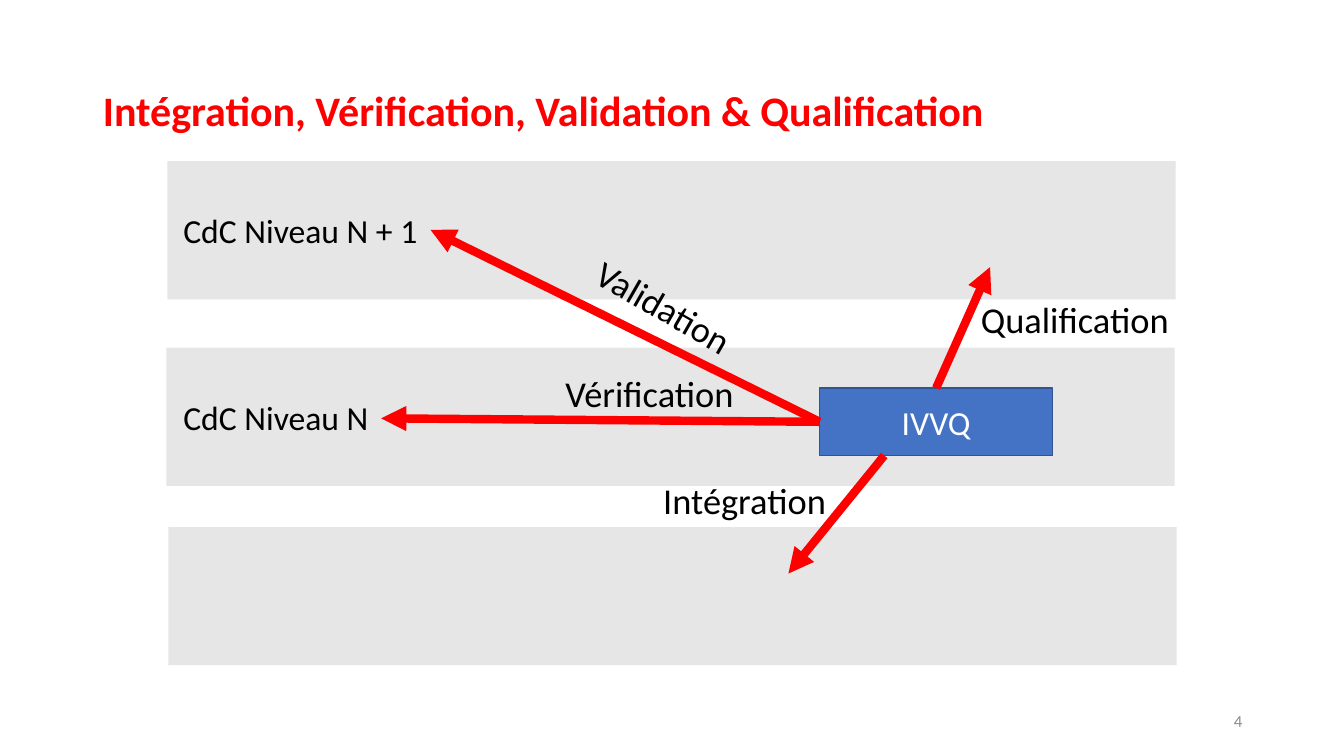
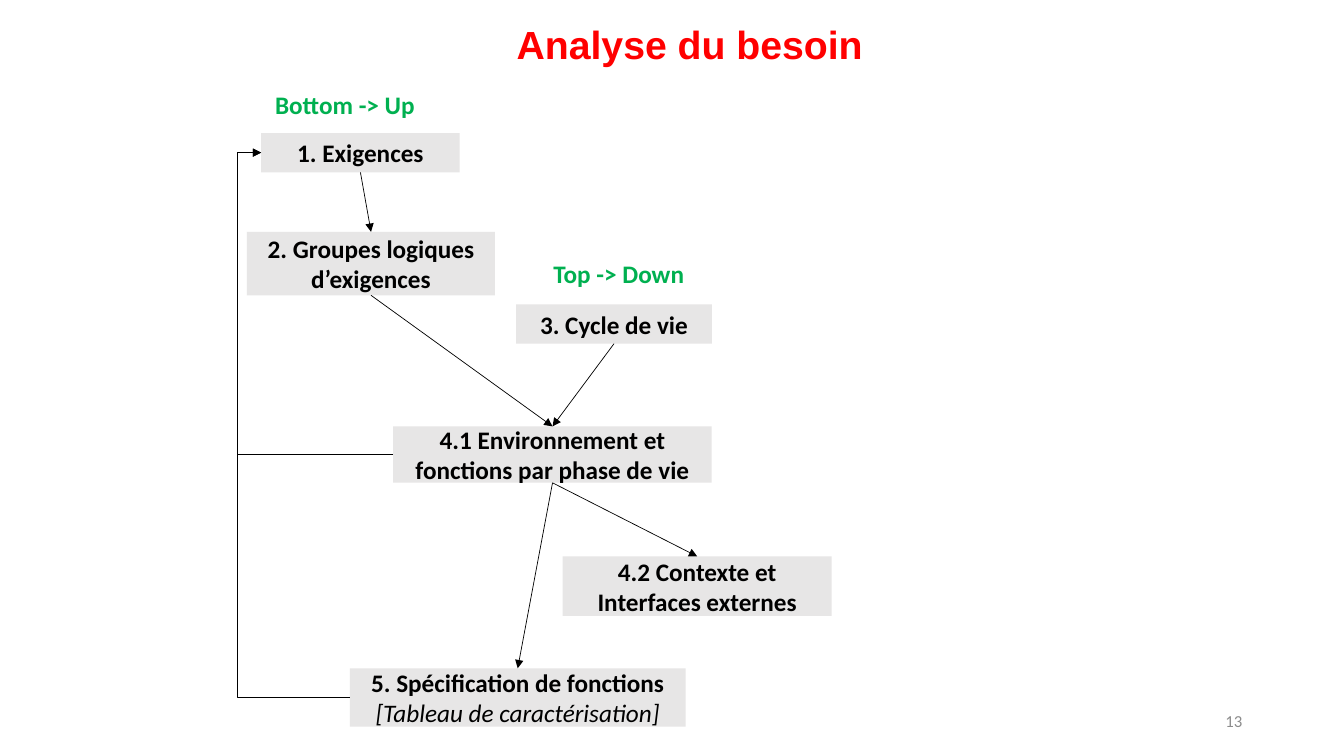
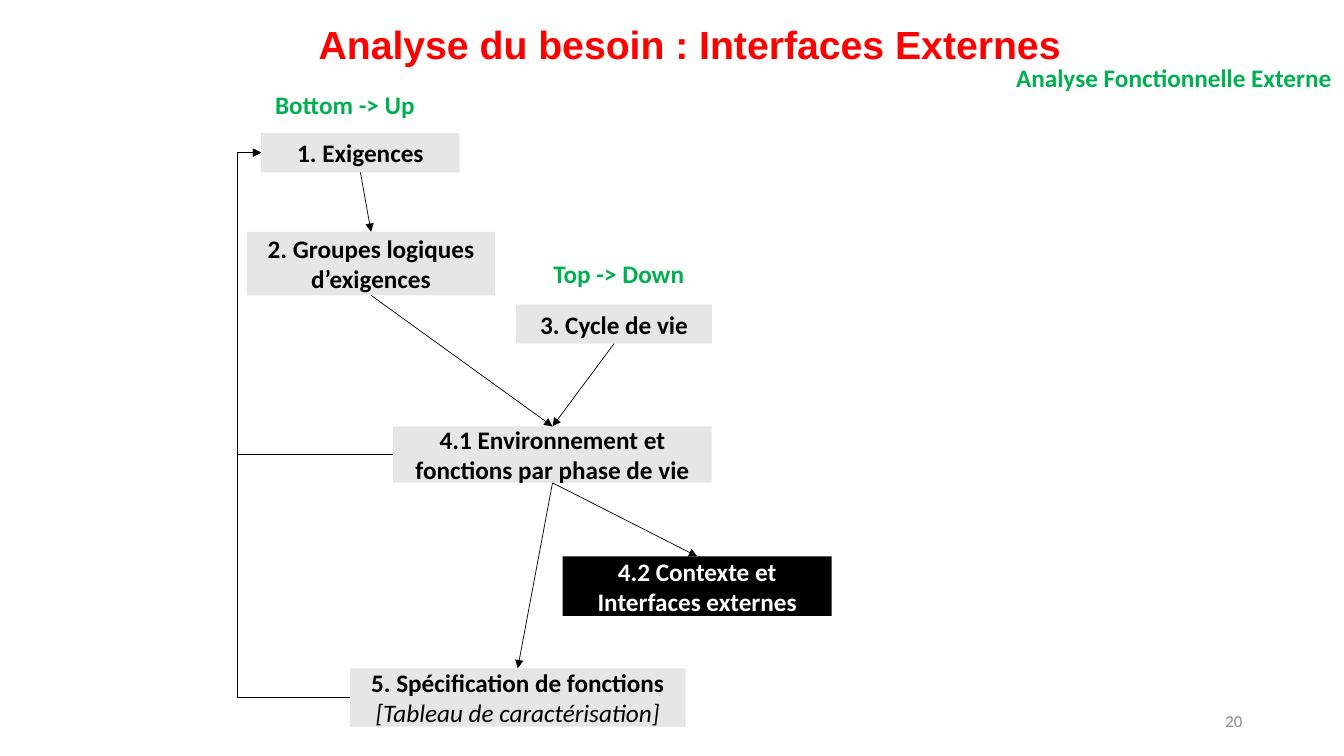
"""Builds three slides on IVVQ and on the analysis of needs."""
from dataclasses import dataclass

from lxml.etree import SubElement
from pptx import Presentation
from pptx.dml.color import RGBColor
from pptx.enum.shapes import MSO_CONNECTOR as Route, MSO_SHAPE as Preset
from pptx.enum.text import MSO_ANCHOR as Anchor, MSO_AUTO_SIZE as Fit, PP_ALIGN as Align
from pptx.oxml.ns import qn
from pptx.util import Inches, Pt


@dataclass(frozen=True)
class Theme:
    red: str = "FF0000"
    green: str = "00B050"
    blue: str = "4472C4"
    navy: str = "325491"
    band: str = "E7E6E6"
    black: str = "000000"
    white: str = "FFFFFF"
    grey: str = "8C8C8C"
    body_font: str = "Calibri"
    title_font: str = "Arial"
    heading: int = 30
    title: int = 28
    action: int = 26
    level: int = 24
    step: int = 18
    page: int = 12
    thick: float = 6
    thin: float = 0.5


theme = Theme()
TOP, LEFT, BOTTOM, RIGHT = range(4)


def write(shape, text, *, size=theme.step, color=theme.black, font=theme.body_font,
          bold=False, italic=False, align=Align.LEFT, anchor=Anchor.TOP,
          wrap=True, fit=Fit.NONE, spacing=None, append=False):
    frame = shape.text_frame
    frame.word_wrap = wrap
    frame.auto_size = fit
    frame.vertical_anchor = anchor
    paragraph = frame.add_paragraph() if append else frame.paragraphs[0]
    paragraph.alignment = align
    paragraph.line_spacing = spacing
    run = paragraph.add_run()
    run.text = text
    run.font.name = font
    run.font.size = Pt(size)
    run.font.bold = bold
    run.font.italic = italic
    run.font.color.rgb = RGBColor.from_string(color)


def draw_arrow(slide, start, end, color, weight, rail=None):
    route = Route.STRAIGHT if rail is None else Route.ELBOW
    arrow = slide.shapes.add_connector(route, 0, 0, 0, 0)
    for target, glue, axes in ((start, arrow.begin_connect, ("begin_x", "begin_y")),
                               (end, arrow.end_connect, ("end_x", "end_y"))):
        if isinstance(target[0], float):
            for axis, length in zip(axes, target):
                setattr(arrow, axis, Inches(length))
        else:
            glue(*target)
    arrow.line.color.rgb = RGBColor.from_string(color)
    arrow.line.width = Pt(weight)
    SubElement(arrow.line._get_or_add_ln(), qn("a:tailEnd"), type="triangle")
    properties = arrow._element.spPr
    SubElement(properties, qn("a:effectLst"))
    if rail is not None:
        bend = (arrow.begin_x - Inches(rail)) / (arrow.begin_x - arrow.end_x)
        guides = properties.find(qn("a:prstGeom")).get_or_add_avLst()
        SubElement(guides, qn("a:gd"), name="adj1", fmla=f"val {round(bend * 100000)}")


deck = Presentation()
deck.slide_width, deck.slide_height = Inches(13.33), Inches(7.5)
title_only = deck.slide_layouts[5]

heading_look = dict(size=theme.heading, font=theme.body_font, spacing=0.9)
title_look = dict(size=theme.title, font=theme.title_font, spacing=1.5, align=Align.CENTER)
title_area = (2.16, 0.01, 9.36, 0.61)
pages = [
    ("Intégration, Vérification, Validation & Qualification", "4",
     (0.92, 0.4, 11.5, 1.45), heading_look),
    ("Analyse du besoin", "13", title_area, title_look),
    ("Analyse du besoin : Interfaces Externes", "20", title_area, title_look),
]
for title, number, area, look in pages:
    slide = deck.slides.add_slide(title_only)
    heading = slide.shapes.title
    heading.left, heading.top, heading.width, heading.height = map(Inches, area)
    write(heading, title, color=theme.red, bold=True, anchor=Anchor.MIDDLE, **look)
    page_number = slide.shapes.add_textbox(*map(Inches, (9.42, 6.95, 3, 0.4)))
    write(page_number, number, size=theme.page, color=theme.grey,
          align=Align.RIGHT, anchor=Anchor.MIDDLE)

ivvq_slide, need_slide, interface_slide = deck.slides

for left, top in ((1.66, 1.6), (1.65, 3.45), (1.67, 5.23)):
    band = ivvq_slide.shapes.add_shape(Preset.RECTANGLE, *map(Inches, (left, top, 10, 1.37)))
    band.shadow.inherit = False
    band.fill.solid()
    band.fill.fore_color.rgb = RGBColor.from_string(theme.band)
    band.line.fill.background()

ivvq = ivvq_slide.shapes.add_shape(Preset.RECTANGLE, *map(Inches, (8.13, 3.85, 2.31, 0.67)))
ivvq.shadow.inherit = False
ivvq.fill.solid()
ivvq.fill.fore_color.rgb = RGBColor.from_string(theme.blue)
ivvq.line.color.rgb = RGBColor.from_string(theme.navy)
ivvq.line.width = Pt(1)
write(ivvq, "IVVQ", size=theme.level, color=theme.white,
      align=Align.CENTER, anchor=Anchor.MIDDLE)

for start, end in (((ivvq, LEFT), (3.78, 4.15)), ((ivvq, LEFT), (4.27, 2.28)),
                   ((ivvq, TOP), (9.82, 2.65)), ((8.77, 4.52), (7.82, 5.69))):
    draw_arrow(ivvq_slide, start, end, theme.red, theme.thick)

for text, area, size, angle in (
        ("Vérification", (5.51, 3.63, 1.89, 0.54), theme.action, 0),
        ("Validation", (5.75, 2.78, 1.69, 0.54), theme.action, 30),
        ("Qualification", (9.63, 2.9, 2.09, 0.54), theme.action, 0),
        ("Intégration", (6.48, 4.69, 1.84, 0.54), theme.action, 0),
        ("CdC Niveau N", (1.72, 3.89, 2.06, 0.5), theme.level, 0),
        ("CdC Niveau N + 1", (1.72, 2.03, 2.54, 0.5), theme.level, 0)):
    label = ivvq_slide.shapes.add_textbox(*map(Inches, area))
    label.rotation = angle
    write(label, text, size=size, wrap=False, fit=Fit.SHAPE_TO_FIT_TEXT)

steps = {
    "1": ("1. Exigences", (2.59, 1.32, 1.97, 0.39)),
    "2": ("2. Groupes logiques d’exigences", (2.45, 2.3, 2.46, 0.63)),
    "3": ("3. Cycle de vie", (5.12, 3.02, 1.94, 0.39)),
    "4.1": ("4.1 Environnement et fonctions par phase de vie", (3.9, 4.23, 3.16, 0.56)),
    "4.2": ("4.2 Contexte et Interfaces externes", (5.58, 5.52, 2.67, 0.59)),
    "5": ("5. Spécification de fonctions", (3.47, 6.63, 3.33, 0.58)),
}
flows = [("1", "2"), ("2", "4.1"), ("3", "4.1"), ("4.1", "4.2"), ("4.1", "5")]
directions = [("Bottom -> Up", 2.63, 0.84), ("Top -> Down", 5.39, 2.51)]

for slide, current in ((need_slide, None), (interface_slide, "4.2")):
    boxes = {}
    for key, (text, area) in steps.items():
        fill, ink = (theme.black, theme.white) if key == current else (theme.band, theme.black)
        box = slide.shapes.add_shape(Preset.RECTANGLE, *map(Inches, area))
        box.shadow.inherit = False
        box.fill.solid()
        box.fill.fore_color.rgb = RGBColor.from_string(fill)
        box.line.fill.background()
        write(box, text, color=ink, bold=True, align=Align.CENTER, anchor=Anchor.MIDDLE)
        boxes[key] = box
    write(boxes["5"], "[Tableau de caractérisation]", italic=True,
          align=Align.CENTER, anchor=Anchor.MIDDLE, append=True)
    for source, target in flows:
        draw_arrow(slide, (boxes[source], BOTTOM), (boxes[target], TOP),
                   theme.black, theme.thin)
    for source in ("5", "4.1"):
        draw_arrow(slide, (boxes[source], LEFT), (boxes["1"], LEFT),
                   theme.black, theme.thin, rail=2.35)
    for text, left, top in directions:
        direction = slide.shapes.add_textbox(*map(Inches, (left, top, 1.99, 0.4)))
        write(direction, text, color=theme.green, bold=True, fit=Fit.SHAPE_TO_FIT_TEXT)

analysis = interface_slide.shapes.add_textbox(*map(Inches, (9.98, 0.57, 3.35, 0.4)))
write(analysis, "Analyse Fonctionnelle Externe", color=theme.green, bold=True,
      wrap=False, fit=Fit.SHAPE_TO_FIT_TEXT)

deck.save("out.pptx")
